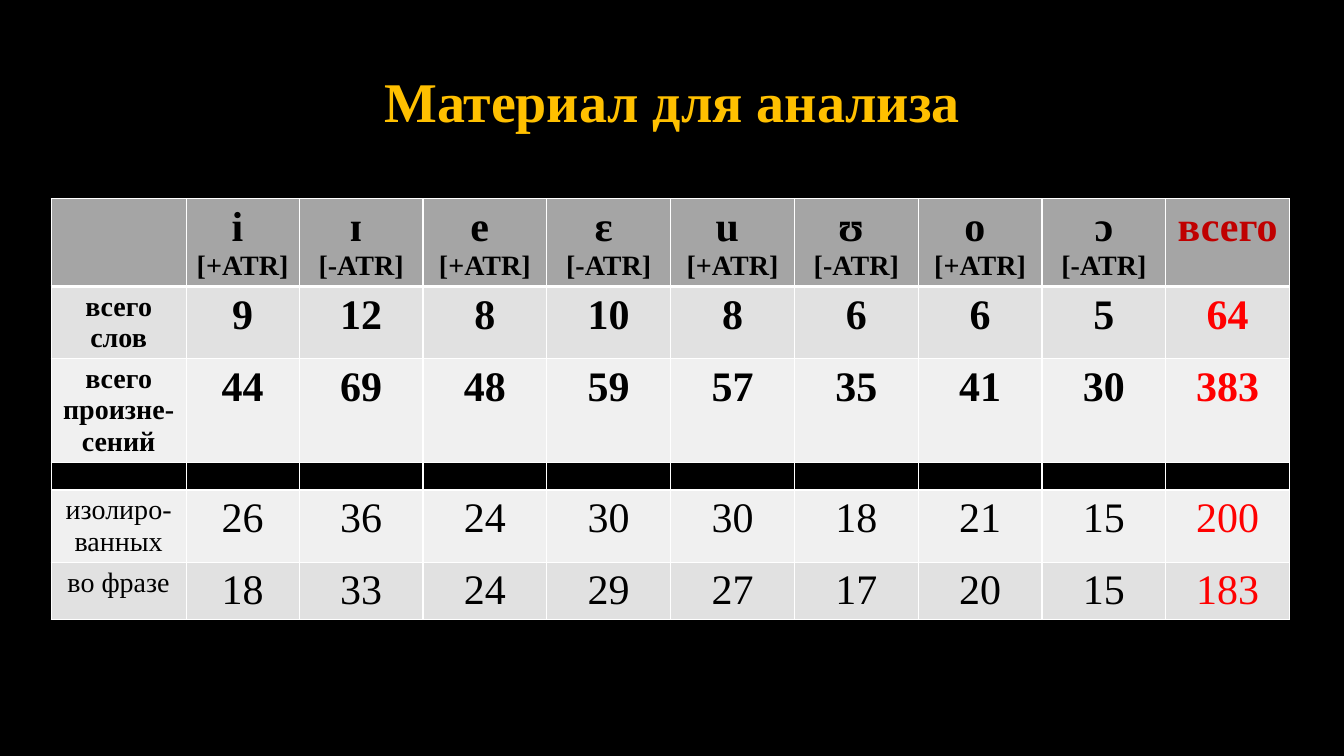
"""Build a slide with a table of vowel recordings used for analysis."""
from lxml import etree
from pptx import Presentation
from pptx.dml.color import RGBColor
from pptx.enum.text import MSO_ANCHOR, PP_ALIGN
from pptx.oxml.ns import qn
from pptx.util import Cm, Pt

CENTER = PP_ALIGN.CENTER
MIDDLE = MSO_ANCHOR.MIDDLE
FONT = "Times New Roman"
BLACK, WHITE, GOLD = "000000", "FFFFFF", "FFC000"
RED, DARK_RED = "FF0000", "C00000"
GRAY, LIGHT, PALE = "A5A5A5", "E1E1E1", "F0F0F0"
LARGE, SMALL, SPACER = 30, 20, 10


def write_line(paragraph, text, size, color, bold):
    paragraph.alignment = CENTER
    run = paragraph.add_run()
    run.text = text
    font_format = {"name": FONT, "size": Pt(size), "bold": bold}
    for attribute, value in font_format.items():
        setattr(run.font, attribute, value)
    run.font.color.rgb = RGBColor.from_string(color)


def format_cell(cell, fill, top, bottom):
    properties = cell._tc.get_or_add_tcPr()
    for side, width in {"lnL": 1, "lnR": 1, "lnT": top, "lnB": bottom}.items():
        line = etree.SubElement(properties, qn(f"a:{side}"), w=str(Pt(width)))
        solid = etree.SubElement(line, qn("a:solidFill"))
        etree.SubElement(solid, qn("a:srgbClr"), val=WHITE)
    cell.fill.solid()
    cell.fill.fore_color.rgb = RGBColor.from_string(fill)


presentation = Presentation()
presentation.slide_width = Cm(33.87)
presentation.slide_height = Cm(19.05)
slide = presentation.slides.add_slide(presentation.slide_layouts[5])
slide.background.fill.solid()
slide.background.fill.fore_color.rgb = RGBColor.from_string(BLACK)

title = slide.shapes.title
title_box = {"left": 2.33, "top": 1.01, "width": 29.21, "height": 3.25}
for attribute, value in title_box.items():
    setattr(title, attribute, Cm(value))
title.text_frame.vertical_anchor = MIDDLE
title_paragraph = title.text_frame.paragraphs[0]
title_paragraph.line_spacing = 0.9
write_line(title_paragraph, "Материал для анализа", 40, GOLD, True)

vowels = ["i ", "ɪ ", "e ", "ɛ ", "u ", "ʊ ", "o ", "ɔ"]
header = [""]
for index, vowel in enumerate(vowels):
    header.append(f"{vowel}\n[{'-' if index % 2 else '+'}ATR]")
header.append("всего")

rows = [
    (header, GRAY, True, 2.21),
    (["всего слов", 9, 12, 8, 10, 8, 6, 6, 5, 64], LIGHT, True, 1.8),
    (["всего произне-сений", 44, 69, 48, 59, 57, 35, 41, 30, 383], PALE, True, 2.62),
    ([""] * len(header), BLACK, False, 0.66),
    (["изолиро-ванных", 26, 36, 24, 30, 30, 18, 21, 15, 200], PALE, False, 1.8),
    (["во фразе", 18, 33, 24, 29, 27, 17, 20, 15, 183], LIGHT, False, 1.45),
]
column_widths = [3.4, 2.85] + [3.12] * 8
last_column = len(column_widths) - 1

table = slide.shapes.add_table(
    len(rows), len(column_widths), Cm(1.29), Cm(5.01),
    Cm(sum(column_widths)), Cm(sum(row[3] for row in rows)),
).table
for column, width in zip(table.columns, column_widths):
    column.width = Cm(width)

for row_index, (values, fill, bold, height) in enumerate(rows):
    table.rows[row_index].height = Cm(height)
    top = 3 if row_index == 1 else 1
    bottom = 3 if row_index == 0 else 1
    for column_index, value in enumerate(values):
        cell = table.cell(row_index, column_index)
        format_cell(cell, fill, top, bottom)
        color = BLACK
        if column_index == last_column:
            color = DARK_RED if row_index == 0 else RED
        paragraph = cell.text_frame.paragraphs[0]
        if value == "":
            etree.SubElement(paragraph._p, qn("a:endParaRPr"), sz=str(SPACER * 100))
            continue
        for line_index, text in enumerate(str(value).split("\n")):
            if line_index:
                paragraph = cell.text_frame.add_paragraph()
            size = SMALL if line_index or column_index == 0 else LARGE
            write_line(paragraph, text, size, color, bold)

presentation.save("out.pptx")
